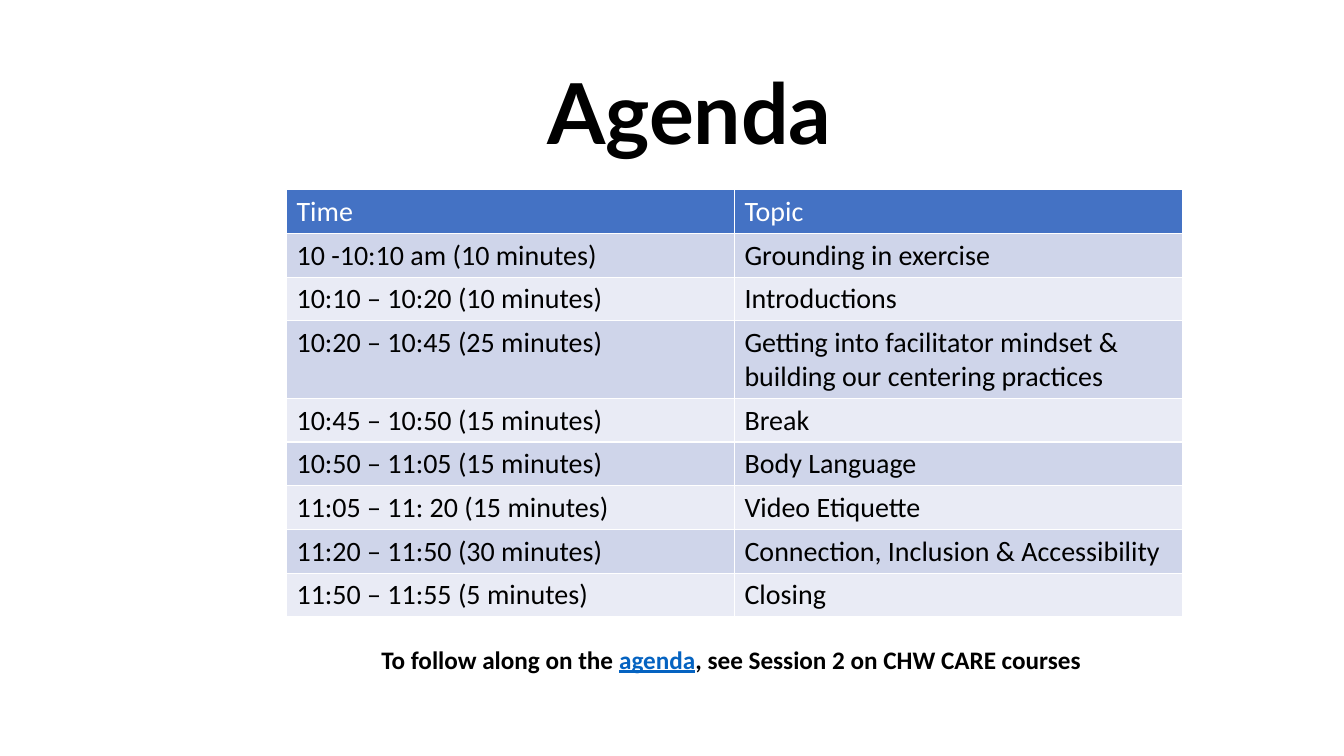
"""Build an agenda slide with a timetable and a closing note."""
from pptx import Presentation
from pptx.dml.color import RGBColor
from pptx.enum.text import MSO_AUTO_SIZE, PP_ALIGN
from pptx.util import Cm, Pt

COLORS = {
    "black": "000000",
    "white": "FFFFFF",
    "header": "4472C4",
    "odd": "CFD5EA",
    "even": "E9EBF5",
    "link": "0563C1",
}
AGENDA = [
    ("Time", "Topic"),
    ("10 -10:10 am (10 minutes)", "Grounding in exercise"),
    ("10:10 – 10:20 (10 minutes)", "Introductions"),
    ("10:20 – 10:45 (25 minutes)",
     "Getting into facilitator mindset & building our centering practices"),
    ("10:45 – 10:50 (15 minutes)", "Break"),
    ("10:50 – 11:05 (15 minutes)", "Body Language"),
    ("11:05 – 11: 20 (15 minutes)", "Video Etiquette"),
    ("11:20 – 11:50 (30 minutes)", "Connection, Inclusion & Accessibility"),
    ("11:50 – 11:55 (5 minutes)", "Closing"),
]
ROW_HEIGHT, TWO_LINE_HEIGHT, TWO_LINE_ROW = 1.1, 1.95, 3


def style_run(r, size, color, font="Calibri", bold=False):
    r.font.size = Pt(size)
    r.font.name = font
    r.font.bold = bold
    r.font.color.rgb = RGBColor.from_string(COLORS[color])


def add_centered_text(s, left, top, width, height):
    tf = s.shapes.add_textbox(Cm(left), Cm(top), Cm(width), Cm(height)).text_frame
    tf.word_wrap = True
    tf.auto_size = MSO_AUTO_SIZE.SHAPE_TO_FIT_TEXT
    p = tf.paragraphs[0]
    p.alignment = PP_ALIGN.CENTER
    return p


prs = Presentation()
prs.slide_width, prs.slide_height = Cm(33.87), Cm(19.05)
s = prs.slides.add_slide(prs.slide_layouts[6])

p = add_centered_text(s, 4.5, 1.4, 25.75, 2.82)
p.text = "Agenda"
style_run(p.runs[0], 60, "black", "Lato", True)

height = ROW_HEIGHT * (len(AGENDA) - 1) + TWO_LINE_HEIGHT
table = s.shapes.add_table(
    len(AGENDA), 2, Cm(7.22), Cm(4.78), Cm(22.58), Cm(height)).table
for i, entry in enumerate(AGENDA):
    table.rows[i].height = Cm(TWO_LINE_HEIGHT if i == TWO_LINE_ROW else ROW_HEIGHT)
    fill = "header" if i == 0 else "odd" if i % 2 else "even"
    for j, text in enumerate(entry):
        cell = table.cell(i, j)
        cell.fill.solid()
        cell.fill.fore_color.rgb = RGBColor.from_string(COLORS[fill])
        cell.text_frame.text = text
        style_run(cell.text_frame.paragraphs[0].runs[0], 20,
                  "black" if i else "white")

p = add_centered_text(s, 6.25, 16.1, 24.5, 1.02)
for text, color in [
    ("To follow along on the ", "black"),
    ("agenda", "link"),
    (", see Session 2 on CHW CARE courses ", "black"),
]:
    r = p.add_run()
    r.text = text
    style_run(r, 18, color, bold=True)
    r.font.underline = color == "link"

prs.save("out.pptx")
